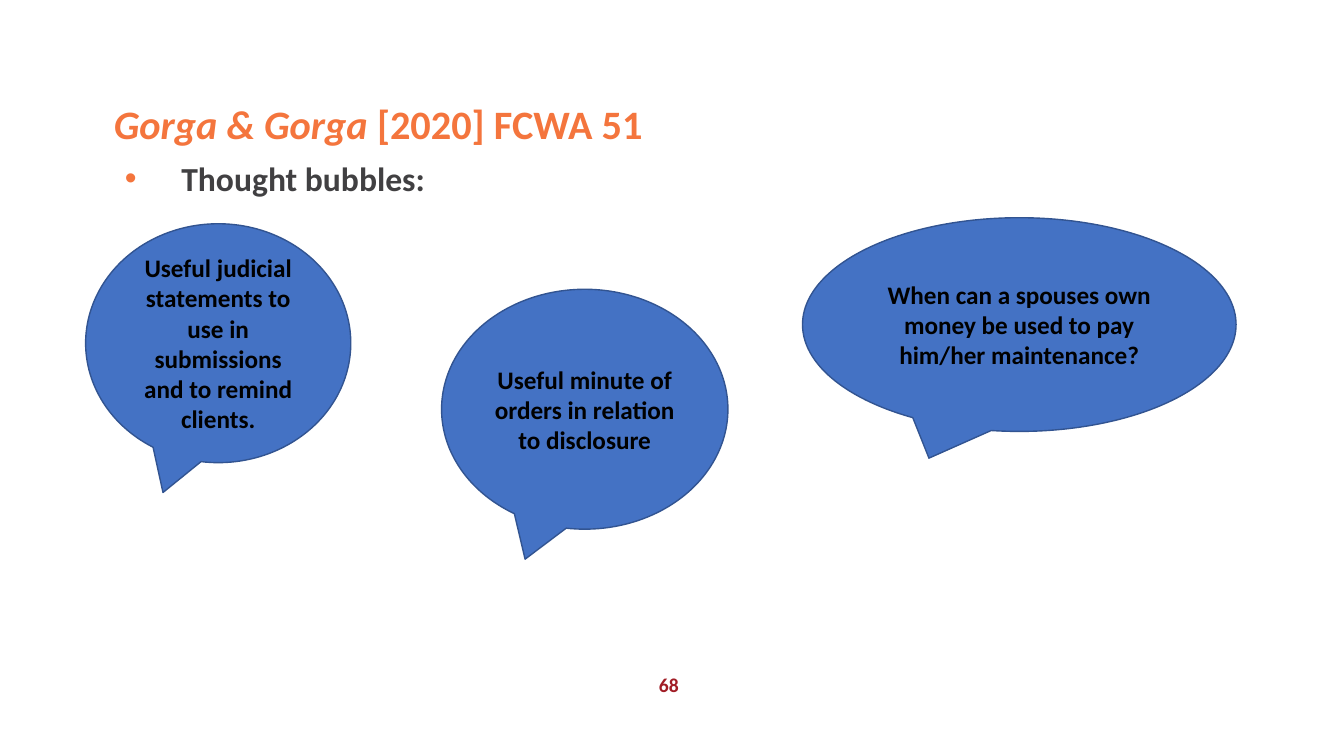
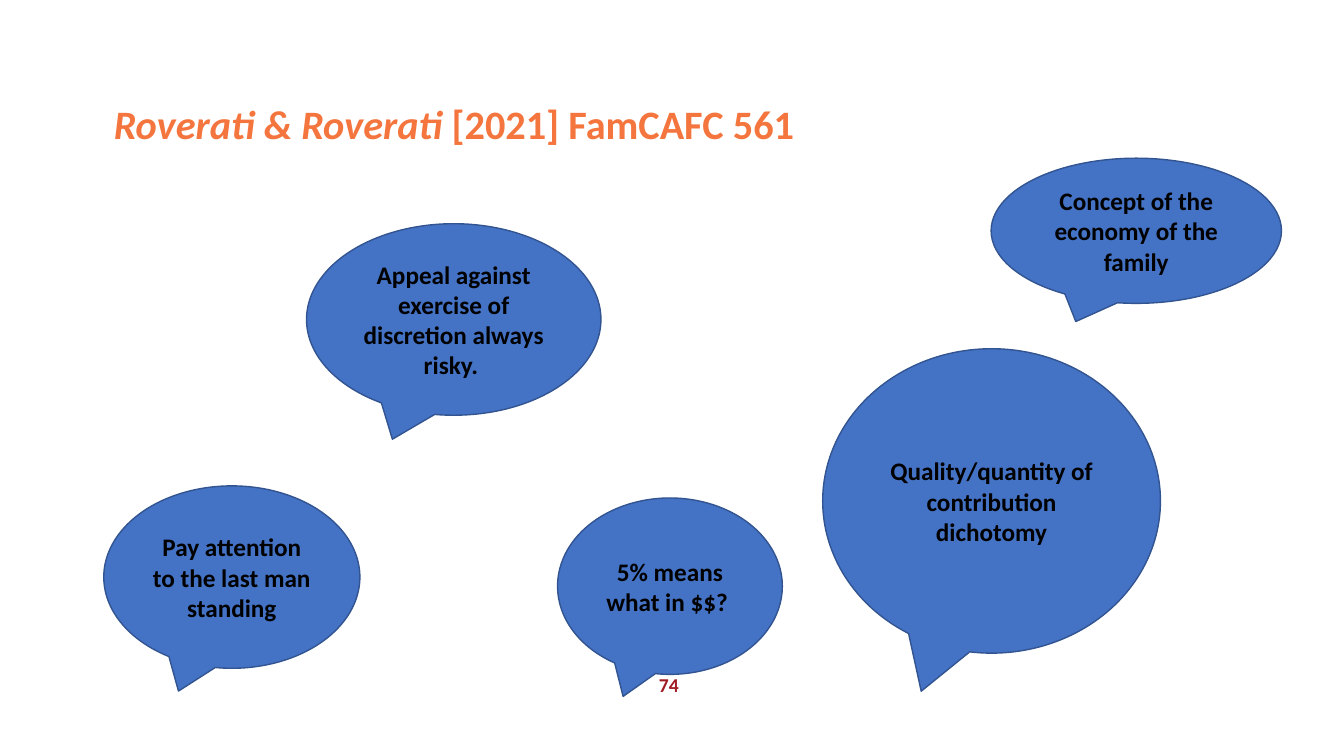
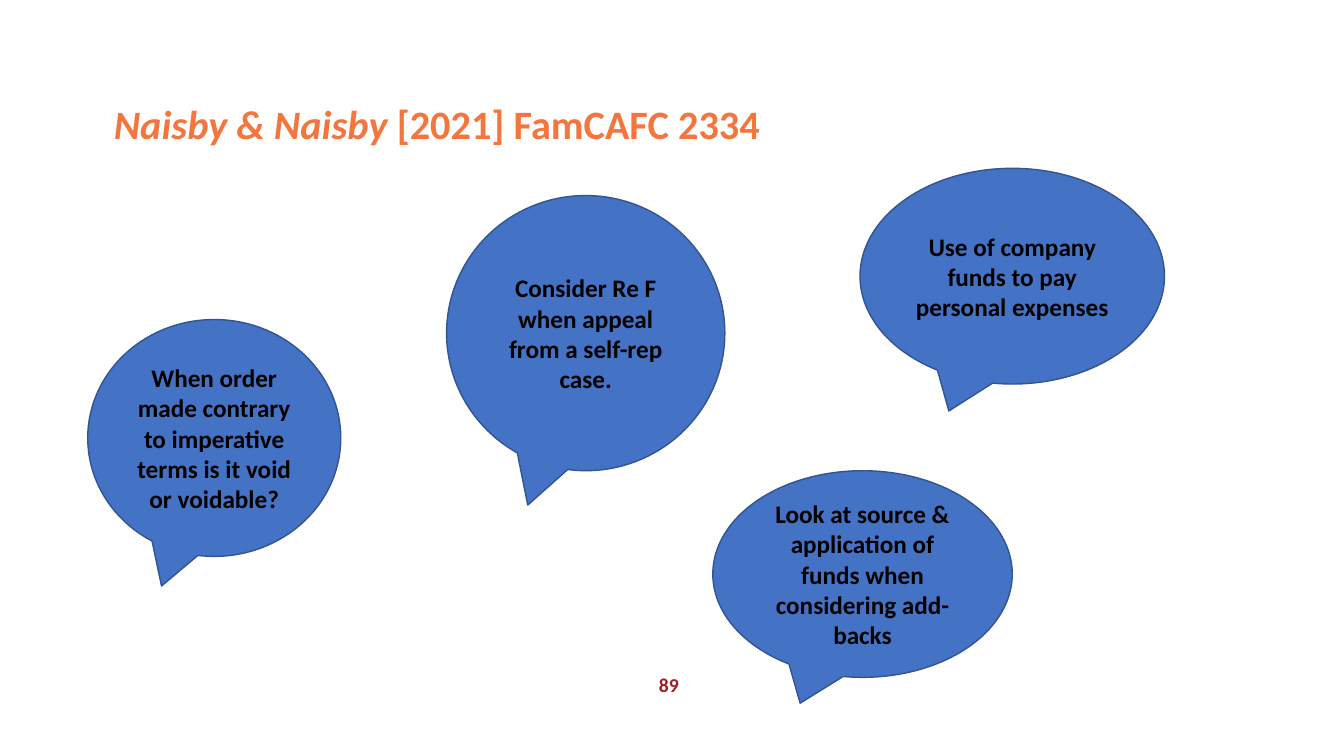
from pptx import Presentation
from pptx.util import Inches, Pt
from pptx.dml.color import RGBColor
from pptx.enum.shapes import MSO_SHAPE as Shape
from pptx.enum.text import MSO_ANCHOR as Anchor, PP_ALIGN as Align
from lxml.etree import SubElement

ORANGE = RGBColor(0xF4, 0x75, 0x3D)
RED = RGBColor(0xA1, 0x1D, 0x26)
GREY = RGBColor(0x41, 0x40, 0x42)
BLUE = RGBColor(0x44, 0x72, 0xC4)
NAVY = RGBColor(0x32, 0x54, 0x91)
BLACK = RGBColor(0, 0, 0)
FONT = "Calibri"

CASES = [
    {
        "name": "Gorga & Gorga ", "cite": "[2020] FCWA 51", "page": "68",
        "point": "Thought bubbles:",
        "bubbles": [
            ("Useful judicial statements to use in submissions and to remind clients.",
             (0.85, 2.22, 2.63, 2.37)),
            ("Useful minute of orders in relation to disclosure",
             (4.38, 2.87, 2.84, 2.38)),
            ("When can a spouses own money be used to pay him/her maintenance?",
             (7.96, 2.16, 4.3, 2.12)),
        ],
    },
    {
        "name": "Roverati & Roverati ", "cite": "[2021] FamCAFC 561", "page": "74",
        "bubbles": [
            ("Pay attention to the last man standing", (1.03, 4.82, 2.54, 1.81)),
            ("Appeal against exercise of discretion always risky. ",
             (3.04, 2.22, 2.92, 1.9)),
            ("5% means what in $$? ", (5.53, 4.94, 2.23, 1.75)),
            ("Concept of the economy of the family", (9.83, 1.57, 2.88, 1.44)),
            ("Quality/quantity of contribution dichotomy", (8.16, 3.46, 3.35, 3.02)),
        ],
    },
    {
        "name": "Naisby & Naisby ", "cite": "[2021] FamCAFC 2334", "page": "89",
        "bubbles": [
            ("When order made contrary to imperative terms is it void or voidable?",
             (0.87, 3.17, 2.51, 2.35)),
            ("Consider Re F when appeal from a self-rep case.",
             (4.43, 1.94, 2.76, 2.73)),
            ("Look at source & application of funds when considering add-backs",
             (7.07, 4.67, 2.97, 2.05)),
            ("Use of company funds to pay personal expenses",
             (8.53, 1.67, 3.02, 2.14)),
        ],
    },
]


def write(shape, runs, size, color, align=Align.LEFT):
    frame = shape.text_frame
    frame.word_wrap = True
    para = frame.paragraphs[0]
    para.alignment = align
    font = para.font
    font.name, font.size, font.bold = FONT, Pt(size), True
    font.color.rgb = color
    for text in runs:
        para.add_run().text = text
    return para


def add_text(slide, box, *style):
    return write(slide.shapes.add_textbox(*map(Inches, box)), *style)


def add_title(slide, name, cite):
    para = add_text(slide, (1.03, 0.99, 11.22, 0.62), [name, cite], 28.8, ORANGE)
    para.line_spacing = 0.9
    para.runs[0].font.italic = True


def add_point(slide, text):
    para = add_text(slide, (1.14, 1.53, 11.21, 0.6), [text], 24, GREY)
    para.line_spacing = Pt(27.6)
    props = para._p.get_or_add_pPr()
    props.set("marL", str(Inches(0.56)))
    props.set("indent", str(-Inches(0.56)))
    space = "{http://schemas.openxmlformats.org/drawingml/2006/main}"
    tint = SubElement(props, space + "buClr")
    SubElement(tint, space + "srgbClr", val=str(ORANGE))
    SubElement(props, space + "buFont", typeface="Arial")
    SubElement(props, space + "buChar", char="•")
    props.append(props.find(space + "defRPr"))


def add_bubble(slide, text, box):
    shape = slide.shapes.add_shape(Shape.OVAL_CALLOUT, *map(Inches, box))
    shape.shadow.inherit = False
    shape.fill.solid()
    shape.fill.fore_color.rgb = BLUE
    shape.line.color.rgb = NAVY
    shape.line.width = Pt(1)
    shape.text_frame.vertical_anchor = Anchor.MIDDLE
    write(shape, [text], 18, BLACK, Align.CENTER)


def main():
    deck = Presentation()
    deck.slide_width, deck.slide_height = Inches(13.33), Inches(7.5)
    for case in CASES:
        slide = deck.slides.add_slide(deck.slide_layouts[6])
        add_text(slide, (5.6, 6.63, 2.07, 0.34), [case["page"]], 14, RED, Align.CENTER)
        add_title(slide, case["name"], case["cite"])
        if "point" in case:
            add_point(slide, case["point"])
        for text, box in case["bubbles"]:
            add_bubble(slide, text, box)
    deck.save("out.pptx")


if __name__ == "__main__":
    main()
